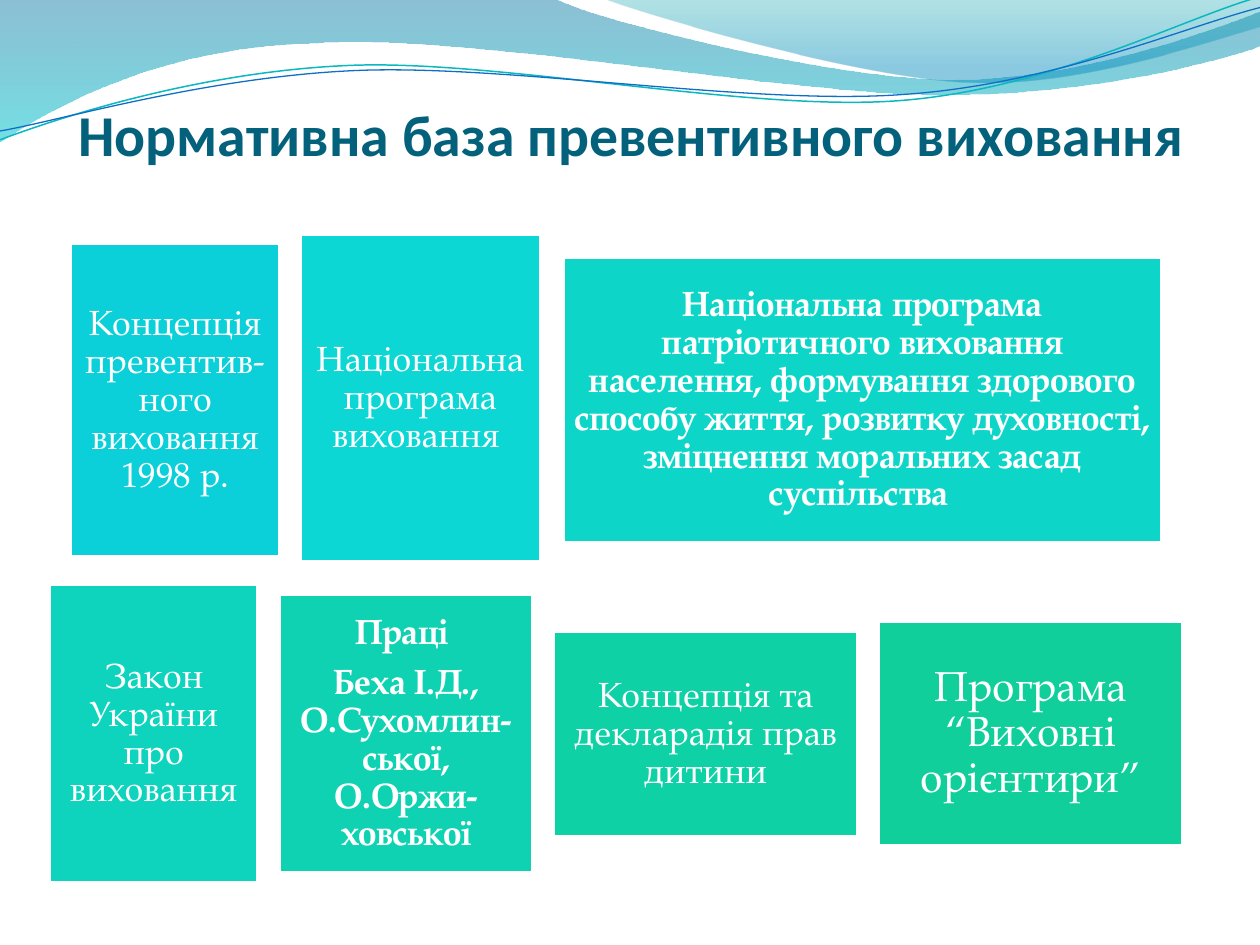
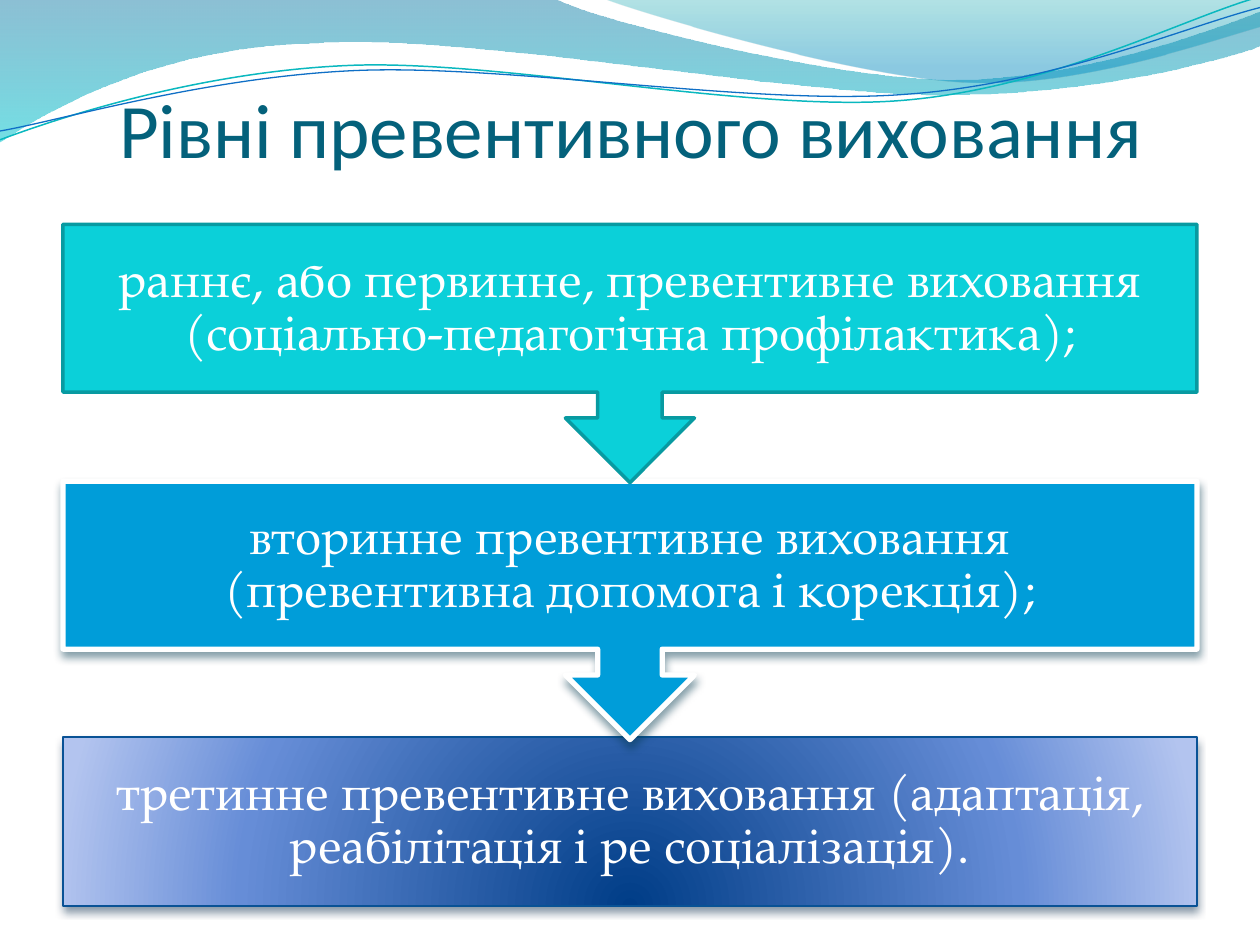
from lxml.etree import SubElement
from pptx import Presentation
from pptx.dml.color import RGBColor
from pptx.enum.lang import MSO_LANGUAGE_ID
from pptx.enum.shapes import MSO_SHAPE
from pptx.enum.text import MSO_ANCHOR, MSO_AUTO_SIZE, PP_ALIGN
from pptx.oxml.ns import qn
from pptx.util import Pt

PX = 9144  # 100 px to the inch
WHITE, TITLE_COLOR = "FFFFFF", "04617B"
TITLE_FONT, BODY_FONT = "Calibri", "TeX Gyre Pagella"
rgb = RGBColor.from_string


def paint(shape, fill, line, width=1):
    """Fill is None, a hex colour, or (stops, focus); focus None means top to bottom."""
    shape.shadow.inherit = False
    if fill is None:
        shape.fill.background()
    elif isinstance(fill, str):
        shape.fill.solid()
        shape.fill.fore_color.rgb = rgb(fill)
    else:
        stops, focus = fill
        shape.fill.gradient()
        gradient = shape.element.spPr.find(qn("a:gradFill"))
        for child in list(gradient):
            gradient.remove(child)
        stop_list = SubElement(gradient, qn("a:gsLst"))
        for position, color, opacity in stops:
            stop = SubElement(stop_list, qn("a:gs"), pos=str(position * 1000))
            tint = SubElement(stop, qn("a:srgbClr"), val=color)
            SubElement(tint, qn("a:alpha"), val=str(opacity * 1000))
        if focus:
            circle = SubElement(gradient, qn("a:path"), path="circle")
            sides = {side: str(share * 1000) for side, share in zip("ltrb", focus)}
            SubElement(circle, qn("a:fillToRect"), **sides)
        else:
            SubElement(gradient, qn("a:lin"), ang="5400000", scaled="0")
    if line:
        shape.line.color.rgb = rgb(line)
        shape.line.width = Pt(width)
    else:
        shape.line.fill.background()


def write(frame, text, font, size, color, bold=False, spacing=1.0, after=0.0):
    frame.word_wrap = True
    frame.auto_size = MSO_AUTO_SIZE.NONE
    frame.text = text
    for para in frame.paragraphs:
        para.alignment = PP_ALIGN.CENTER
        para.line_spacing = spacing
        para.space_before = Pt(0)
        para.space_after = Pt(after * size)
        for span in para.runs:
            span.font.name = font
            span.font.size = Pt(size)
            span.font.bold = bold
            span.font.color.rgb = rgb(color)
            span.font.language_id = MSO_LANGUAGE_ID.UKRAINIAN


deck = Presentation()
deck.slide_width, deck.slide_height = 1000 * PX, 750 * PX

# Pages with their titles
titles = [
    ("Нормативна база превентивного виховання", 84, 65, 33, True, 0.8),
    ("Рівні превентивного виховання", 60, 125, 44, False, 1.0),
]
pages = []
for text, top, height, size, bold, spacing in titles:
    page = deck.slides.add_slide(deck.slide_layouts[5])
    title = page.shapes.title
    title.left, title.top, title.width, title.height = 51 * PX, top * PX, 900 * PX, height * PX
    write(title.text_frame, text, TITLE_FONT, size, TITLE_COLOR, bold, spacing)
    title.text_frame.vertical_anchor = MSO_ANCHOR.TOP
    pages.append(page)
base_page, levels_page = pages

# Shared waves: a start point, then lines (2 numbers) and curves (6 numbers)
waves = [
    ((0, 0), [(440, -1), (476, 17, 664, 63, 758, 63), (853, 63, 958, 26, 1000, 9),
              (1001, 36), (983, 44, 870, 76, 746, 75), (622, 75, 382, 28, 257, 34),
              (129, 36, 46, 83, -1, 113), (0, 0)],
     ([(0, "0074A1", 45), (100, "00C6CF", 55)], None), None, 1),
    ((479, -1), [(509, 11, 682, 62, 769, 65), (856, 69, 961, 32, 1000, 21),
                 (1000, 0), (479, -1)],
     ([(0, "00A1A9", 30), (80, "008BBF", 45)], None), None, 1),
    ((0, 111), [(48, 93, 158, 57, 277, 52), (395, 47, 593, 89, 713, 80),
                (833, 71, 938, 15, 998, -2)], None, "0AB8BF", 0.85),
    ((0, 104), [(47, 96, 164, 61, 283, 56), (403, 51, 597, 84, 717, 75),
                (836, 67, 941, 21, 1000, 6)], None, "0F6FC6", 0.75),
]
master_tree = deck.slide_master.shapes.element
for index, (start, segments, fill, line, width) in enumerate(waves):
    builder = base_page.shapes.build_freeform(start[0] * PX, start[1] * PX)
    ends = [(segment[-2] * PX, segment[-1] * PX) for segment in segments]
    builder.add_line_segments(ends, close=fill is not None)
    wave = builder.convert_to_shape()
    # Bend the straight segments that have control points
    outline = wave.element.spPr.find(".//" + qn("a:path"))
    for straight, segment in zip(outline.findall(qn("a:lnTo")), segments):
        if len(segment) == 6:
            curve = SubElement(outline, qn("a:cubicBezTo"))
            for x, y in zip(segment[::2], segment[1::2]):
                SubElement(curve, qn("a:pt"), x=str(x * PX - wave.left),
                           y=str(y * PX - wave.top))
            outline.replace(straight, curve)
    paint(wave, fill, line, width)
    # Move the wave to the master, behind its placeholders
    wave.element.nvSpPr.cNvPr.set("id", str(101 + index))
    master_tree.insert(2 + index, wave.element)

# Cards of the normative base
cards = [
    (56, 193, 166, 249, "0BD0D9", 20, False, "Концепція превентив-ного виховання 1998 р."),
    (238, 186, 191, 260, "0CD7D5", 20, False, "Національна програма виховання "),
    (447, 204, 475, 227, "0DD6C9", 20, True,
     "Національна програма патріотичного виховання населення, формування здорового "
     "способу життя, розвитку духовності, зміцнення моральних засад суспільства "),
    (39, 464, 166, 237, "0ED4BD", 20, False, "Закон України про виховання"),
    (222, 472, 201, 221, "0ED2B2", 20, True,
     "Праці \nБеха І.Д., О.Сухомлин-ської, О.Оржи-ховської"),
    (439, 501, 242, 163, "0FD1A6", 20, False, "Концепція та декларадія прав дитини"),
    (697, 493, 242, 178, "10CF9B", 24, False, "Програма “Виховні орієнтири”"),
]
for left, top, width, height, fill, size, bold, text in cards:
    card = base_page.shapes.add_shape(
        MSO_SHAPE.RECTANGLE, left * PX, top * PX, width * PX, height * PX)
    paint(card, fill, WHITE, 2)
    frame = card.text_frame
    write(frame, text, BODY_FONT, size, WHITE, bold, 0.9, 0.35)
    frame.vertical_anchor = MSO_ANCHOR.MIDDLE
    inset = 10 * PX if size == 24 else 8 * PX
    frame.margin_left = frame.margin_top = frame.margin_right = frame.margin_bottom = inset

# Levels, from the last to the first so that each arrow lies over the next box
last_fill = ([(0, "003D87", 100), (68, "668DD7", 100), (100, "B3C4EF", 100)],
             (50, 130, 50, -30))
levels = [
    (MSO_SHAPE.RECTANGLE, 585, 134, last_fill, "095295", 0.75, "042747",
     "третинне превентивне виховання (адаптація, реабілітація і ре соціалізація)."),
    (MSO_SHAPE.DOWN_ARROW_CALLOUT, 382, 205, "009DD9", WHITE, 3, "00374C",
     "вторинне превентивне виховання (превентивна допомога і корекція);"),
    (MSO_SHAPE.DOWN_ARROW_CALLOUT, 178, 205, "0BD0D9", "089AA1", 2, None,
     "раннє, або первинне, превентивне виховання (соціально-педагогічна профілактика);"),
]
for kind, top, height, fill, line, width, shadow, text in levels:
    level = levels_page.shapes.add_shape(kind, 50 * PX, top * PX, 900 * PX, height * PX)
    paint(level, fill, line, width)
    if shadow:
        effects = level.element.spPr.find(qn("a:effectLst"))
        outer = SubElement(effects, qn("a:outerShdw"), blurRad=str(Pt(4.5)),
                           dist=str(Pt(3)), dir="5400000", rotWithShape="0")
        tint = SubElement(outer, qn("a:srgbClr"), val=shadow)
        SubElement(tint, qn("a:alpha"), val="48000")
    frame = level.text_frame
    write(frame, text, BODY_FONT, 28, WHITE, False, 0.9, 0.35)
    frame.vertical_anchor = MSO_ANCHOR.MIDDLE
    frame.margin_left = frame.margin_top = frame.margin_right = frame.margin_bottom = 22 * PX

deck.save("out.pptx")
